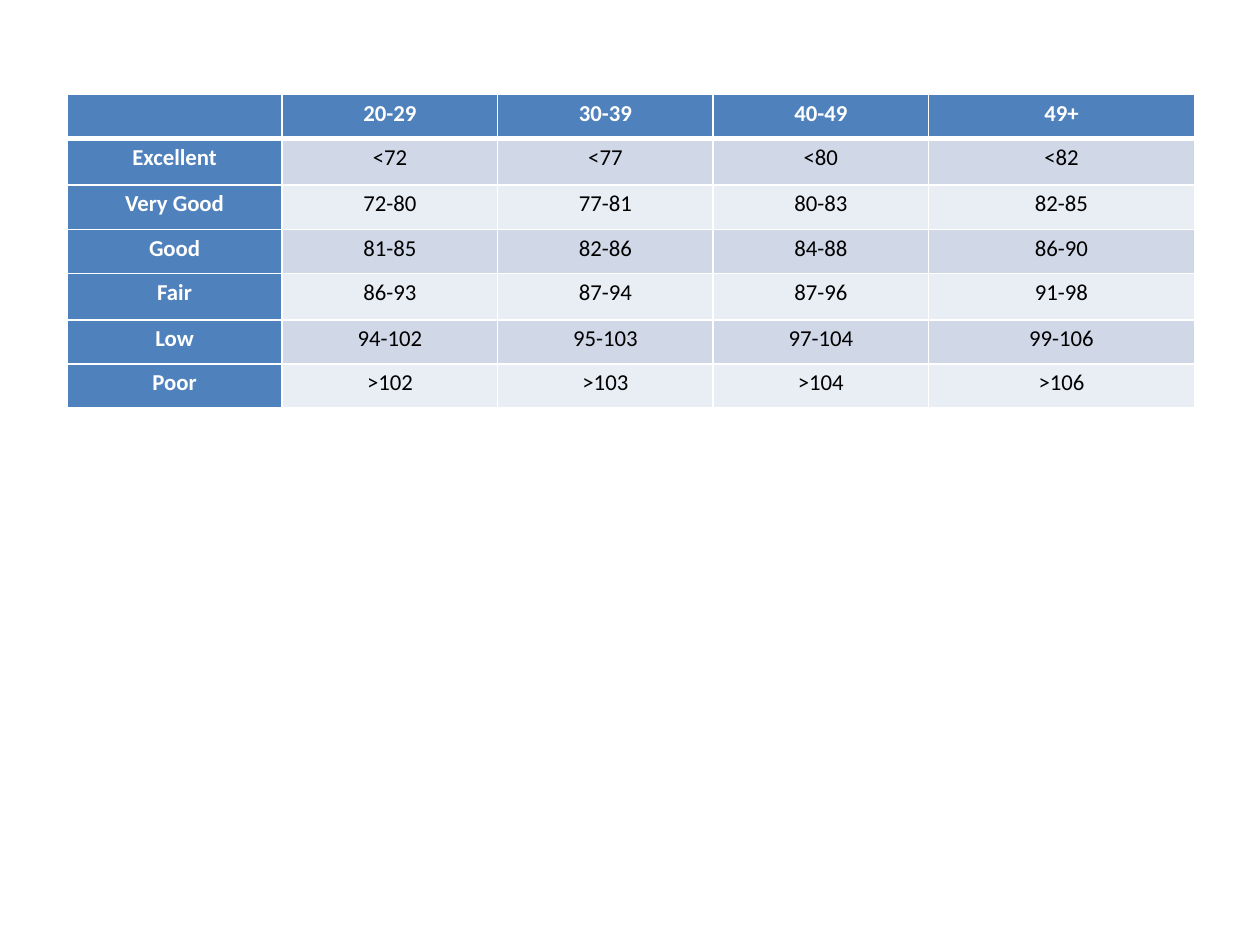
from dataclasses import dataclass

from lxml import etree
from pptx import Presentation
from pptx import util as u
from pptx.dml.color import RGBColor
from pptx.enum import text
from pptx.oxml import ns

WHITE, BLACK, BLUE = "FFFFFF", "000000", "4F81BD"
BANDS = ("D0D8E8", "E9EDF4")


@dataclass
class Rating:
    label: str
    ranges: tuple[str, ...]
    height: float = 0.35


AGES = Rating("", ("20-29", "30-39", "40-49", "49+"))
RATINGS = [
    Rating("Excellent", ("<72", "<77", "<80", "<82"), 0.37),
    Rating("Very Good", ("72-80", "77-81", "80-83", "82-85")),
    Rating("Good", ("81-85", "82-86", "84-88", "86-90")),
    Rating("Fair", ("86-93", "87-94", "87-96", "91-98"), 0.37),
    Rating("Low", ("94-102", "95-103", "97-104", "99-106")),
    Rating("Poor", (">102", ">103", ">104", ">106")),
]
COLUMN_WIDTHS = [1.71] * 4 + [2.11]


def rgb(value: str) -> RGBColor:
    return RGBColor.from_string(value)


def write(cell, words: str, *, size: float = 13, color: str = BLACK,
          bold: bool = False, font: str = "Calibri") -> None:
    """Write one centred line into a cell."""
    cell.margin_left = cell.margin_right = u.Inches(0.07)
    cell.margin_top = cell.margin_bottom = 0
    paragraph = cell.text_frame.paragraphs[0]
    paragraph.alignment = text.PP_ALIGN.CENTER
    paragraph.line_spacing = u.Pt(18.8)
    if words:
        run = paragraph.add_run()
        run.text = words
        run.font.size, run.font.name, run.font.bold = u.Pt(size), font, bold
        run.font.color.rgb = rgb(color)


def add_borders(cell, *, top: float = 1, bottom: float = 1) -> None:
    """Draw white cell borders, with widths in points."""
    properties = cell._tc.get_or_add_tcPr()
    for side, width in {"L": 1, "R": 1, "T": top, "B": bottom}.items():
        line = etree.SubElement(properties, ns.qn(f"a:ln{side}"), w=str(u.Pt(width)))
        fill = etree.SubElement(line, ns.qn("a:solidFill"))
        etree.SubElement(fill, ns.qn("a:srgbClr"), val=WHITE)


def add_rating_table(slide, ratings: list[Rating], widths: list[float]) -> None:
    height = sum(rating.height for rating in ratings)
    table = slide.shapes.add_table(
        len(ratings), len(widths), u.Inches(0.53), u.Inches(0.75),
        u.Inches(sum(widths)), u.Inches(height)).table
    for column, width in zip(table.columns, widths):
        column.width = u.Inches(width)

    for r, rating in enumerate(ratings):
        table.rows[r].height = u.Inches(rating.height)
        for c, words in enumerate((rating.label, *rating.ranges)):
            cell = table.cell(r, c)
            heading = r == 0 or c == 0
            write(cell, words, color=WHITE if heading else BLACK, bold=heading)
            # A thick rule parts the age groups from the ratings
            add_borders(cell, top=3 if r == 1 else 1, bottom=3 if r == 0 else 1)
            cell.fill.solid()
            cell.fill.fore_color.rgb = rgb(BLUE if heading else BANDS[(r - 1) % 2])


def main() -> None:
    # Slide
    deck = Presentation()
    deck.slide_width, deck.slide_height = u.Inches(10), u.Inches(7.5)
    slide = deck.slides.add_slide(deck.slide_layouts[6])

    # Ratings by age group
    add_rating_table(slide, [AGES, *RATINGS], COLUMN_WIDTHS)
    deck.save("out.pptx")


if __name__ == "__main__":
    main()
